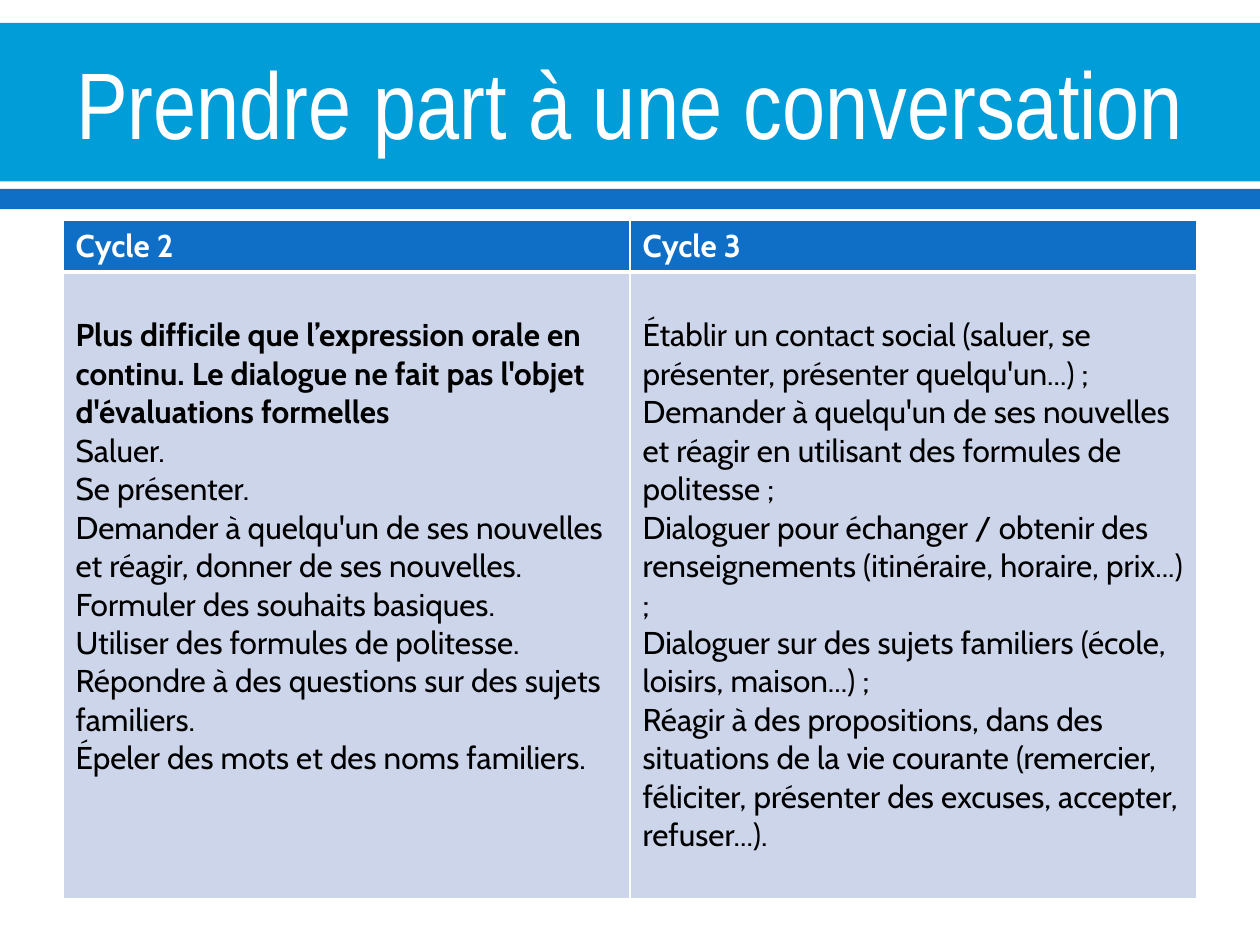
import pptx
import pptx.dml.color
import pptx.enum.shapes
import pptx.enum.text
import pptx.oxml.ns
import pptx.util
from lxml import etree
from pptx.util import Cm

COLORS = {
    "band": "009DD9",
    "accent": "0F6FC6",
    "cell": "CCD5EA",
    "light": "FFFFFF",
    "dark": "000000",
}

TITLE_FONT = {"name": "Arial Narrow", "size": pptx.util.Pt(54), "bold": False}
HEADER_FONT = {"name": "Cabin", "size": pptx.util.Pt(18), "bold": True}
BODY_FONT = {**HEADER_FONT, "bold": False}

CYCLES = {
    "Cycle 2": [
        "Plus difficile que l’expression orale en continu. "
        "Le dialogue ne fait pas l'objet d'évaluations formelles",
        "Saluer.",
        "Se présenter.",
        "Demander à quelqu'un de ses nouvelles et réagir, donner de ses nouvelles.",
        "Formuler des souhaits basiques.",
        "Utiliser des formules de politesse.",
        "Répondre à des questions sur des sujets familiers.",
        "Épeler des mots et des noms familiers.",
    ],
    "Cycle 3": [
        "Établir un contact social (saluer, se présenter, présenter quelqu'un...) ;",
        "Demander à quelqu'un de ses nouvelles et réagir en utilisant "
        "des formules de politesse ;",
        "Dialoguer pour échanger / obtenir des renseignements "
        "(itinéraire, horaire, prix...) ;",
        "Dialoguer sur des sujets familiers (école, loisirs, maison...) ;",
        "Réagir à des propositions, dans des situations de la vie courante "
        "(remercier, féliciter, présenter des excuses, accepter,",
        "refuser...).",
    ],
}
WARNING = CYCLES["Cycle 2"][0]


def rgb(color):
    return pptx.dml.color.RGBColor.from_string(COLORS[color])


def apply(target, values):
    for attribute, value in values.items():
        setattr(target, attribute, value)


class SlideBuilder:
    """Holds the current slide and draws each kind of element in its style."""

    def __init__(self, slide):
        self.slide = slide

    def fill(self, target, color):
        target.fill.solid()
        target.fill.fore_color.rgb = rgb(color)

    def add_lines(self, frame, lines, font, color, alignment):
        for index, line in enumerate(lines):
            paragraph = frame.add_paragraph() if index else frame.paragraphs[0]
            paragraph.alignment = alignment
            run = paragraph.add_run()
            run.text = line
            apply(run.font, font)
            run.font.bold = font["bold"] or line == WARNING
            run.font.color.rgb = rgb(color)

    def title(self, text, left, top, width, height):
        title = self.slide.shapes.title
        apply(title, {"left": left, "top": top, "width": width, "height": height})
        apply(title.text_frame, {
            "word_wrap": True,
            "auto_size": pptx.enum.text.MSO_AUTO_SIZE.NONE,
            "vertical_anchor": pptx.enum.text.MSO_ANCHOR.MIDDLE,
        })
        self.add_lines(title.text_frame, [text], TITLE_FONT, "light",
                       pptx.enum.text.PP_ALIGN.CENTER)

    def band(self, color, top, height, width):
        shapes = self.slide.shapes
        band = shapes.add_shape(
            pptx.enum.shapes.MSO_SHAPE.RECTANGLE, 0, top, width, height)
        band.shadow.inherit = False
        self.fill(band, color)
        band.line.fill.background()
        # Bands lie behind the title
        shapes.title.element.addprevious(band.element)

    def borders(self, cell, widths):
        properties = cell._tc.get_or_add_tcPr()
        for position, (side, points) in enumerate(widths.items()):
            line = etree.Element(pptx.oxml.ns.qn(f"a:ln{side}"),
                                 w=str(pptx.util.Pt(points)))
            solid = etree.SubElement(line, pptx.oxml.ns.qn("a:solidFill"))
            etree.SubElement(solid, pptx.oxml.ns.qn("a:srgbClr"), val=COLORS["light"])
            properties.insert(position, line)

    def cell(self, cell, lines, font, color, background, widths):
        self.fill(cell, background)
        self.borders(cell, widths)
        self.add_lines(cell.text_frame, lines, font, color,
                       pptx.enum.text.PP_ALIGN.LEFT)

    def table(self, columns, left, top, width, row_heights):
        table = self.slide.shapes.add_table(
            len(row_heights), len(columns), left, top, width, sum(row_heights)).table
        for row, height in zip(table.rows, row_heights):
            row.height = height
        for index, (heading, lines) in enumerate(columns.items()):
            self.cell(table.cell(0, index), [heading], HEADER_FONT, "light",
                      "accent", {"L": 1, "R": 1, "T": 1, "B": 3})
            body = table.cell(1, index)
            self.cell(body, lines, BODY_FONT, "dark",
                      "cell", {"L": 1, "R": 1, "T": 3, "B": 1})
            body.margin_top = Cm(0.9)


def main():
    presentation = pptx.Presentation()
    apply(presentation, {"slide_width": Cm(25.4), "slide_height": Cm(19.05)})
    title_only = presentation.slide_layouts[5]
    builder = SlideBuilder(presentation.slides.add_slide(title_only))

    # Header bands and title
    builder.band("band", Cm(0.46), Cm(3.2), presentation.slide_width)
    builder.band("accent", Cm(3.81), Cm(0.41), presentation.slide_width)
    builder.title("Prendre part à une conversation",
                  Cm(1.27), Cm(0.51), Cm(22.86), Cm(3.1))

    # Skills of each cycle
    builder.table(CYCLES, Cm(1.27), Cm(4.45), Cm(22.86), [Cm(1.03), Cm(12.63)])

    presentation.save("out.pptx")


if __name__ == "__main__":
    main()
